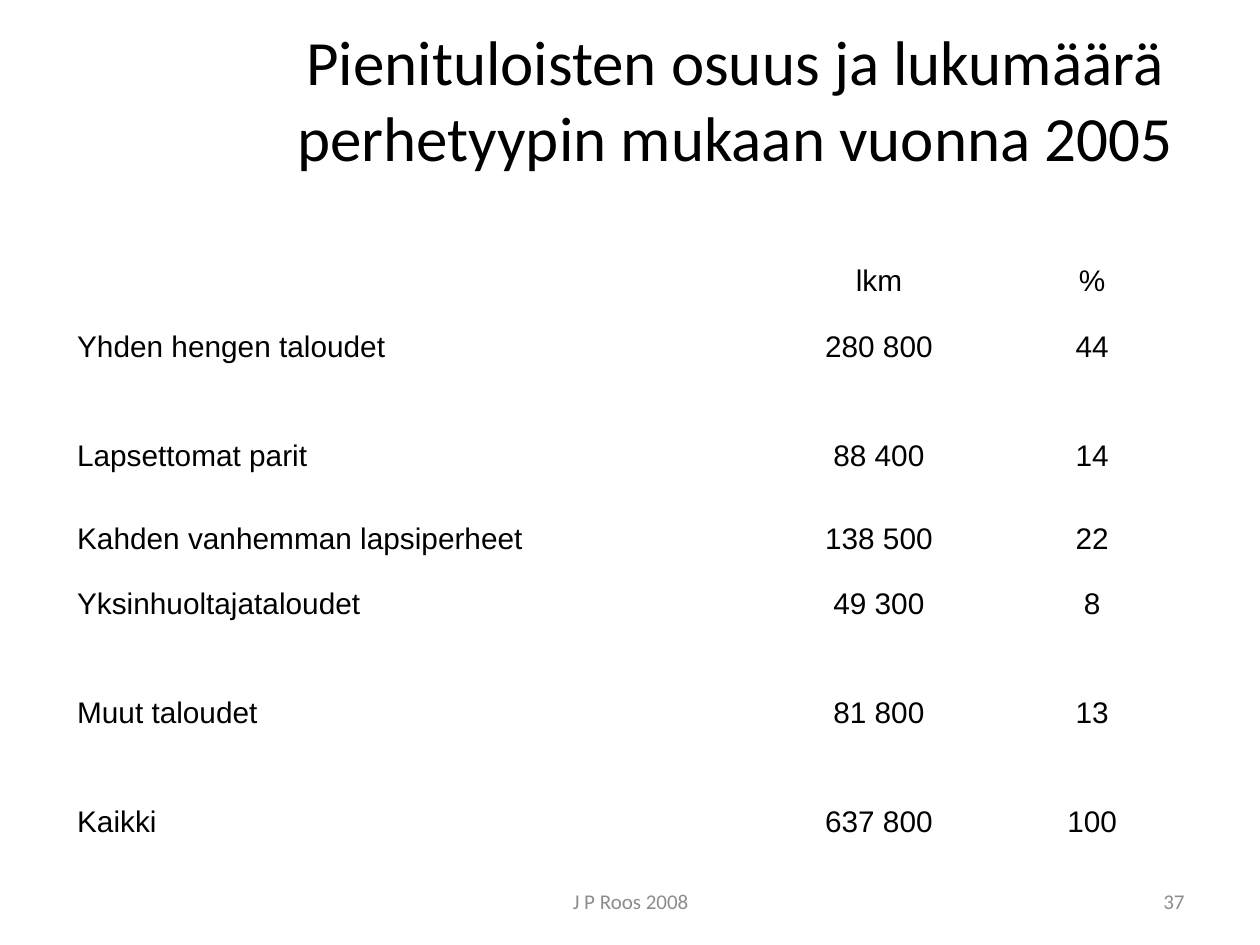
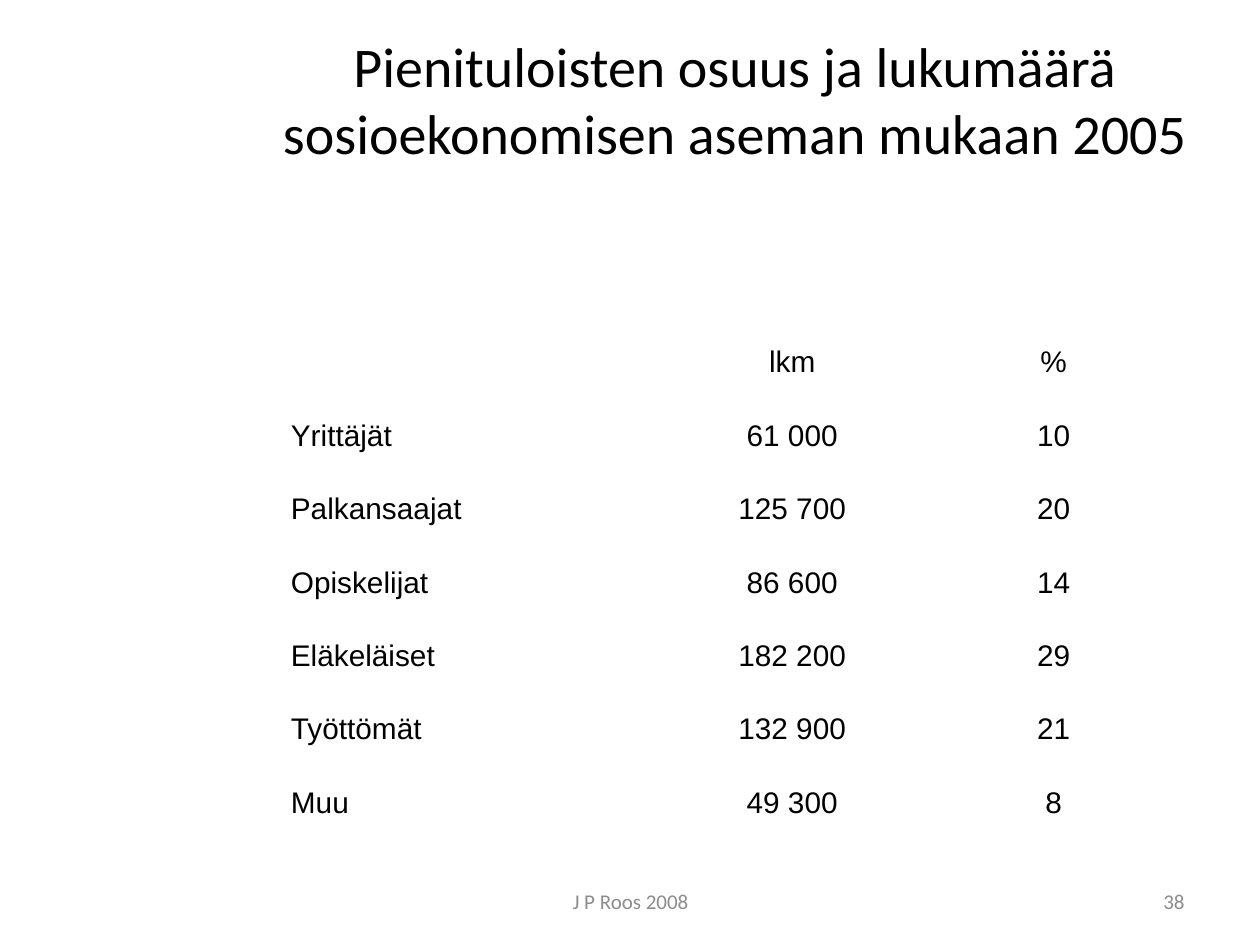
from pptx import Presentation
from pptx.dml.color import RGBColor
from pptx.enum.text import MSO_ANCHOR as Anchor, MSO_AUTO_SIZE as AutoSize, PP_ALIGN as Align
from pptx.util import Cm, Pt

# Shared look
BLACK = RGBColor(0x00, 0x00, 0x00)
GREY = RGBColor(0x8C, 0x8C, 0x8C)
HEADING_FONT = "Calibri"
TABLE_FONT = "Arial"
TITLE_ONLY = 5
FOOTER = "J P Roos 2008"

# Table contents: household or status, number, per cent
HEADER = ("", "lkm", "%")
FAMILY_TYPES = [
    HEADER,
    ("Yhden hengen taloudet", "280 800", "44"),
    ("Lapsettomat parit", "88 400", "14"),
    ("Kahden vanhemman lapsiperheet", "138 500", "22"),
    ("Yksinhuoltajataloudet", "49 300", "8"),
    ("Muut taloudet", "81 800", "13"),
    ("Kaikki", "637 800", "100"),
]
FAMILY_LABEL_SPANS = [1, 3, 2, 3, 3, 2, 1]
STATUSES = [
    HEADER,
    ("Yrittäjät", "61 000", "10"),
    ("Palkansaajat", "125 700", "20"),
    ("Opiskelijat", "86 600", "14"),
    ("Eläkeläiset", "182 200", "29"),
    ("Työttömät", "132 900", "21"),
    ("Muu", "49 300", "8"),
]


def place(shape, left, top, width, height):
    shape.left, shape.top = Cm(left), Cm(top)
    shape.width, shape.height = Cm(width), Cm(height)


def add_text(frame, text, font, size, colour, align):
    paragraph = frame.paragraphs[0]
    paragraph.alignment = align
    run = paragraph.add_run()
    run.text = text
    run.font.name, run.font.size = font, Pt(size)
    run.font.color.rgb = colour
    return paragraph


def add_title(slide, text, size):
    title = slide.shapes.title
    place(title, 5.08, 0.43, 19.48, 3.1)
    frame = title.text_frame
    frame.word_wrap, frame.auto_size = True, AutoSize.NONE
    frame.vertical_anchor = Anchor.MIDDLE
    add_text(frame, text, HEADING_FONT, size, BLACK, Align.CENTER)


def add_footer_text(slide, text, left, width, align):
    box = slide.shapes.add_textbox(Cm(left), Cm(17.65), Cm(width), Cm(1.02))
    box.text_frame.word_wrap = True
    box.text_frame.vertical_anchor = Anchor.MIDDLE
    add_text(box.text_frame, text, HEADING_FONT, 12, GREY, align)


def add_slide(prs, title, title_size, number):
    slide = prs.slides.add_slide(prs.slide_layouts[TITLE_ONLY])
    add_footer_text(slide, FOOTER, 8.69, 8.05, Align.CENTER)
    add_footer_text(slide, str(number), 18.21, 5.92, Align.RIGHT)
    add_title(slide, title, title_size)
    return slide


def fill_cell(cell, text, align, hanging):
    cell.vertical_anchor = Anchor.BOTTOM
    if not text:
        return
    paragraph = add_text(cell.text_frame, text, TABLE_FONT, 17, BLACK, align)
    paragraph.line_spacing = Pt(30)
    if hanging:
        properties = paragraph._p.get_or_add_pPr()
        properties.set("marL", str(Cm(hanging)))
        properties.set("indent", str(-Cm(hanging)))


def add_figures(slide, left, top, widths, heights, records, spans=None, hanging=0):
    """Labels start in the first column; the figures take the last two."""
    frame = slide.shapes.add_table(len(heights), len(widths), Cm(left), Cm(top),
                                   Cm(sum(widths)), Cm(sum(heights)))
    table = frame.table
    table.first_row = table.horz_banding = False
    for column, width in zip(table.columns, widths):
        column.width = Cm(width)
    for row, height in zip(table.rows, heights):
        row.height = Cm(height)
    for cell in table.iter_cells():
        cell.fill.background()

    last = len(widths) - 1
    for r, (label, count, share) in enumerate(records):
        if spans and spans[r] > 1:
            table.cell(r, 0).merge(table.cell(r, spans[r] - 1))
        fill_cell(table.cell(r, 0), label, Align.LEFT, hanging)
        fill_cell(table.cell(r, last - 1), count, Align.CENTER, hanging)
        fill_cell(table.cell(r, last), share, Align.CENTER, hanging)


def main():
    prs = Presentation()
    prs.slide_width, prs.slide_height = Cm(25.4), Cm(19.05)

    # Low incomes by family type
    families = add_slide(
        prs, "Pienituloisten osuus ja lukumäärä perhetyypin mukaan vuonna 2005", 36, 37)
    tall, middle, low = 2.2, 1.68, 1.31
    add_figures(families, 1.3, 3.94, [4.52, 4.52, 5.18, 4.4, 4.2],
                [tall, low, tall, middle, low, tall, tall],
                FAMILY_TYPES, FAMILY_LABEL_SPANS, hanging=0.79)

    # Low incomes by socio-economic status
    statuses = add_slide(
        prs, "Pienituloisten osuus ja lukumäärä sosioekonomisen aseman mukaan 2005", 32, 38)
    add_figures(statuses, 5.61, 5.13, [7.67, 5.38, 5.16],
                [2.64] + [1.48] * (len(STATUSES) - 1), STATUSES)

    prs.save("out.pptx")


if __name__ == "__main__":
    main()
